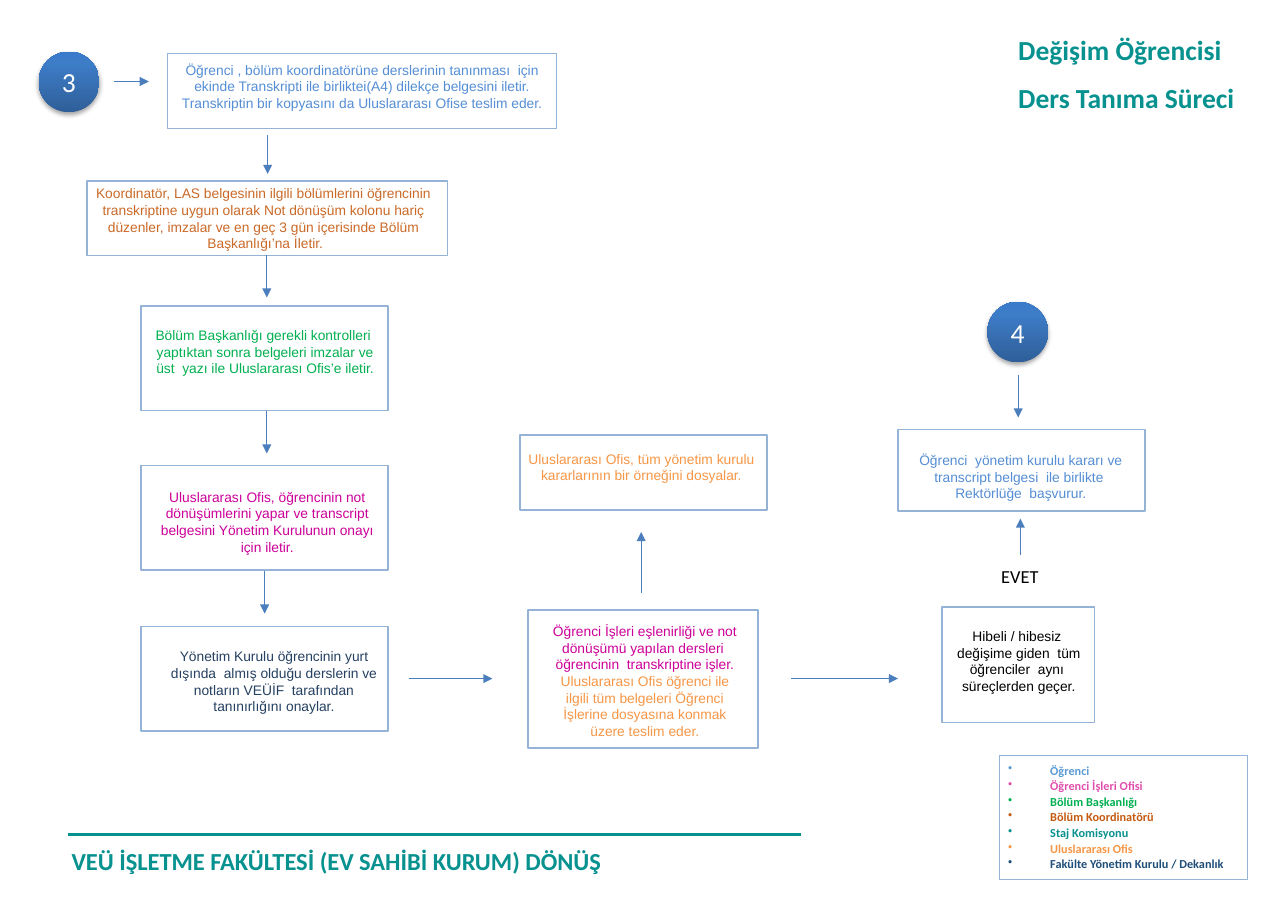
import copy
import lxml.etree
import pptx
import pptx.dml.color
import pptx.enum.shapes
import pptx.enum.text
import pptx.oxml.ns
import pptx.util

Cm, Pt = pptx.util.Cm, pptx.util.Pt
qn = pptx.oxml.ns.qn
Shape = pptx.enum.shapes.MSO_SHAPE
Align = pptx.enum.text.PP_ALIGN
Anchor = pptx.enum.text.MSO_ANCHOR
TEAL, BLUE, ORANGE, PINK, GREEN = "07918F", "558ED5", "F79646", "CC0099", "00B050"


def tint(code):
    return pptx.dml.color.RGBColor.from_string(code)


def put(item, style):
    for name, value in style.items():
        setattr(item, name, value)


def node(root, tag, **attrs):
    return lxml.etree.SubElement(root, qn(tag), attrs)


class Chart:
    """Draw the parts of a flow chart on one slide in a shared style."""

    edge, arrow = "95B3D7", "4B7EBC"
    body = {"name": "Arial", "size": Pt(9)}
    head = {"name": "Calibri", "size": Pt(18), "bold": True}
    foot = {"name": "Calibri", "size": Pt(16), "bold": True}
    mark = {"name": "Calibri", "size": Pt(18)}
    note = {"name": "Calibri", "size": Pt(12)}
    key = {"name": "Calibri", "size": Pt(8), "bold": True}

    def __init__(self, deck):
        self.slide = deck.slides.add_slide(deck.slide_layouts[5])
        self.shapes = self.slide.shapes

    def frame(self, shape, pad=(0, 0, 0), anchor=Anchor.TOP):
        left, top, right = pad
        text = shape.text_frame
        put(text, {
            "word_wrap": True,
            "auto_size": pptx.enum.text.MSO_AUTO_SIZE.NONE,
            "vertical_anchor": anchor,
            "margin_left": Cm(left),
            "margin_top": Cm(top),
            "margin_right": Cm(right),
            "margin_bottom": 0,
        })
        return text

    def say(self, text, lines, font, **style):
        for i, runs in enumerate(lines):
            para = text.paragraphs[0] if i == 0 else text.add_paragraph()
            put(para, style)
            for words, code in runs:
                run = para.add_run()
                run.text = words
                put(run.font, font)
                run.font.color.rgb = tint(code)

    def title(self, place, lines):
        shape = self.shapes.title
        put(shape, dict(zip(("left", "top", "width", "height"), map(Cm, place))))
        self.say(self.frame(shape), [[(line, TEAL)] for line in lines], self.head,
                 alignment=Align.LEFT, line_spacing=1.07,
                 space_before=Pt(0), space_after=Pt(8))

    def label(self, place, words, code, font, pad=(0, 0, 0), **style):
        shape = self.shapes.add_textbox(*map(Cm, place))
        self.say(self.frame(shape, pad), [[(words, code)]], font, **style)

    def rect(self, place, pad):
        shape = self.shapes.add_shape(Shape.RECTANGLE, *map(Cm, place))
        shape.shadow.inherit = False
        shape.fill.background()
        shape.line.color.rgb = tint(self.edge)
        shape.line.width = Pt(1)
        return self.frame(shape, pad)

    def step(self, place, pad, *runs):
        self.say(self.rect(place, pad), [runs], self.body,
                 alignment=Align.CENTER, space_before=Pt(1))

    def legend(self, place, pad, items):
        text = self.rect(place, pad)
        self.say(text, [[item] for item in items], self.key,
                 alignment=Align.LEFT, line_spacing=1.07)
        for para in text.paragraphs:
            props = para._p.get_or_add_pPr()
            props.set("marL", str(Cm(0.97)))
            props.set("indent", str(-Cm(0.97)))
            node(props, "a:buChar", char="•")

    def ball(self, left, top, words):
        shape = self.shapes.add_shape(Shape.OVAL, Cm(left), Cm(top), Cm(1.4), Cm(1.4))
        shape.line.fill.background()
        shape.fill.gradient()
        shape.fill.gradient_angle = 90
        props = shape._element.spPr
        stops = props.find(".//" + qn("a:gsLst"))
        stops.append(copy.deepcopy(stops[0]))
        shades = (0, "2F5F99"), (0.8, "3D7CC7"), (1, "3A7CCB")
        for stop, (spot, code) in zip(shape.fill.gradient_stops, shades):
            stop.position = spot
            stop.color.rgb = tint(code)
        shape.shadow.inherit = False
        glow = node(props.find(qn("a:effectLst")), "a:outerShdw", blurRad=str(Pt(3.1)),
                    dist=str(Pt(1.8)), dir="5400000", rotWithShape="0")
        node(node(glow, "a:srgbClr", val="000000"), "a:alpha", val="35000")
        self.say(self.frame(shape, anchor=Anchor.MIDDLE), [[(words, "FFFFFF")]],
                 self.mark, alignment=Align.CENTER)

    def line(self, ends, code=arrow, width=0.75, tip=True):
        kind = pptx.enum.shapes.MSO_CONNECTOR.STRAIGHT
        link = self.shapes.add_connector(kind, *map(Cm, ends))
        link.line.color.rgb = tint(code)
        link.line.width = Pt(width)
        props = link._element.spPr
        if tip:
            node(props.find(qn("a:ln")), "a:tailEnd", type="triangle")
        node(props, "a:effectLst")


def main():
    deck = pptx.Presentation()
    put(deck, {"slide_width": Cm(29.69), "slide_height": Cm(21.01)})
    flow = Chart(deck)
    flow.title((23.47, 0.71, 5.89, 2.26), ["Değişim Öğrencisi", "Ders Tanıma Süreci"])
    flow.legend((23.04, 17.42, 5.72, 2.87), (0.2, 0.15, 0.1), [
        ("Öğrenci", "5B9BD5"),
        ("Öğrenci İşleri Ofisi", "E14FAD"),
        ("Bölüm Başkanlığı", GREEN),
        ("Bölüm Koordinatörü", "C55A11"),
        ("Staj Komisyonu", TEAL),
        ("Uluslararası Ofis", ORANGE),
        ("Fakülte Yönetim Kurulu / Dekanlık", "1F4E79"),
    ])
    flow.line((1.57, 19.25, 18.47, 19.25), TEAL, 2.25, False)
    flow.label((1.65, 19.84, 17.25, 0.25), "VEÜ İŞLETME FAKÜLTESİ (EV SAHİBİ KURUM) DÖNÜŞ",
               TEAL, flow.foot, line_spacing=Pt(9.6))
    flow.ball(0.89, 1.19, "3")
    flow.ball(22.76, 6.96, "4")

    steps = [
        ((3.86, 1.24, 8.97, 1.73), (0.18, 0.18, 0.18),
         ("Öğrenci , bölüm koordinatörüne derslerinin tanınması  için ekinde Transkripti ile "
          "birliktei(A4) dilekçe belgesini iletir. Transkriptin bir kopyasını da Uluslararası "
          "Ofise teslim eder.", BLUE)),
        ((2.01, 4.17, 8.31, 1.73), (0.1, 0.1, 0.2),
         ("Koordinatör, LAS belgesinin ilgili bölümlerini öğrencinin  transkriptine uygun "
          "olarak Not dönüşüm kolonu hariç  düzenler, imzalar ve en geç 3 gün içerisinde "
          "Bölüm  Başkanlığı’na İletir.", "CB6A28")),
        ((3.25, 7.06, 5.69, 2.41), (0.18, 0.48, 0.15),
         ("Bölüm Başkanlığı gerekli kontrolleri  yaptıktan sonra belgeleri imzalar ve "
          "üst  yazı ile Uluslararası Ofis’e iletir.", GREEN)),
        ((3.25, 10.74, 5.69, 2.41), (0.23, 0.53, 0.1),
         ("Uluslararası Ofis, öğrencinin not dönüşümlerini yapar ve transcript "
          "belgesini Yönetim Kurulunun onayı için iletir.", PINK)),
        ((3.25, 14.45, 5.69, 2.41), (0.59, 0.5, 0.15),
         ("Yönetim Kurulu öğrencinin yurt dışında  almış olduğu derslerin ve notların "
          "VEÜİF  tarafından tanınırlığını onaylar.", "254061")),
        ((11.99, 10.03, 5.69, 1.73), (0, 0.36, 0.1),
         ("Uluslararası Ofis, tüm yönetim kurulu kararlarının bir örneğini dosyalar.", ORANGE)),
        ((12.17, 14.07, 5.31, 3.18), (0.51, 0.3, 0.43),
         ("Öğrenci İşleri eşlenirliği ve not dönüşümü yapılan dersleri  öğrencinin  "
          "transkriptine işler. ", PINK),
         ("Uluslararası Ofis öğrenci ile ilgili tüm belgeleri Öğrenci İşlerine dosyasına "
          "konmak üzere teslim eder.", ORANGE)),
        ((20.7, 9.91, 5.69, 1.88), (0.15, 0.51, 0.18),
         ("Öğrenci  yönetim kurulu kararı ve transcript belgesi  ile birlikte  "
          "Rektörlüğe  başvurur.", BLUE)),
        ((21.72, 14, 3.51, 2.67), (0.25, 0.48, 0.23),
         ("Hibeli / hibesiz  değişime giden  tüm öğrenciler  aynı  süreçlerden geçer.",
          "000000")),
    ]
    for step in steps:
        flow.step(*step)
    flow.label((22.83, 12.9, 2.13, 0.76), "EVET", "000000", flow.note, (0.25, 0.13, 0.25))

    arrows = [
        (6.17, 3.12, 6.17, 4.01), (6.15, 5.87, 6.15, 6.86), (6.15, 9.47, 6.15, 10.46),
        (6.1, 13.16, 6.1, 14.15), (23.47, 8.64, 23.47, 9.63), (2.62, 1.88, 3.43, 1.88),
        (23.52, 12.8, 23.52, 11.96), (18.24, 15.65, 20.7, 15.65),
        (9.42, 15.65, 11.35, 15.65), (14.78, 13.67, 14.78, 12.27),
    ]
    for ends in arrows:
        flow.line(ends)
    deck.save("out.pptx")


if __name__ == "__main__":
    main()
